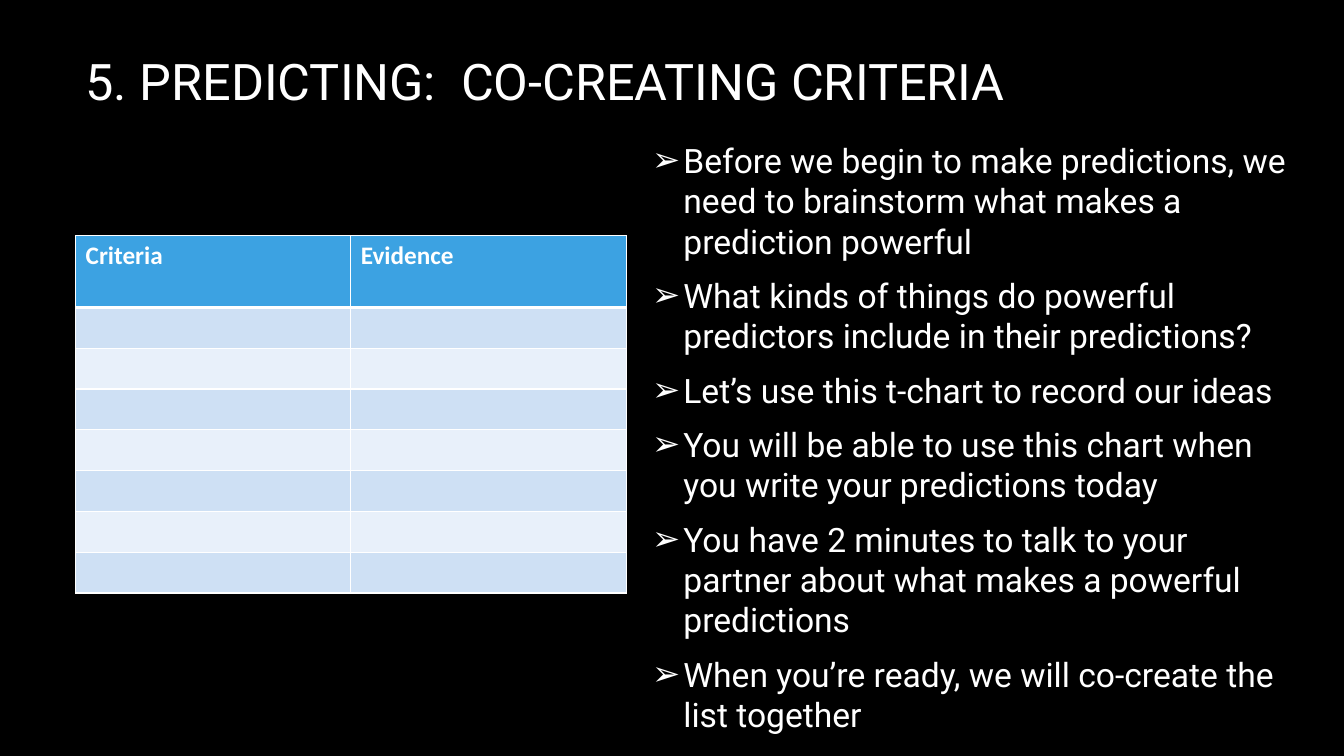
from lxml import etree
from pptx import Presentation
from pptx import util as u
from pptx.dml.color import RGBColor
from pptx.enum import text
from pptx.oxml.ns import qn

COLORS = {
    "background": "000000",
    "text": "FFFFFF",
    "header": "3CA2E2",
    "odd_row": "CEE0F4",
    "even_row": "E8F0FA",
}
TITLE = "5. PREDICTING:  CO-CREATING CRITERIA"
HEADINGS = ["Criteria", "Evidence"]
BLANK_ROWS = 7
STEPS = [
    "Before we begin to make predictions, we need to brainstorm what makes a prediction powerful",
    "What kinds of things do powerful predictors include in their predictions?",
    "Let’s use this t-chart to record our ideas",
    "You will be able to use this chart when you write your predictions today",
    "You have 2 minutes to talk to your partner about what makes a powerful predictions",
    "When you’re ready, we will co-create the list together",
]


class SlideBuilder:
    """Holds the style and the current slide; lengths are half-inch grid cells."""

    CELL = 0.5
    FONT = "Roboto"
    TABLE_FONT = "Calibri"

    def __init__(self, presentation):
        layout = presentation.slide_layouts.get_by_name("Title Only")
        self.slide = presentation.slides.add_slide(layout)
        self.paint(self.slide.background.fill, "background")

    def grid(self, *cells):
        return [u.Inches(cell * self.CELL) for cell in cells]

    def paint(self, fill, color):
        fill.solid()
        fill.fore_color.rgb = RGBColor.from_string(COLORS[color])

    def style(self, paragraph, size, font_name, bold=False):
        for run in paragraph.runs:
            run.font.size = u.Pt(size)
            run.font.name = font_name
            run.font.bold = bold
            run.font.color.rgb = RGBColor.from_string(COLORS["text"])

    def title(self, wording, *place):
        shape = self.slide.shapes.title
        shape.left, shape.top, shape.width, shape.height = self.grid(*place)
        frame = shape.text_frame
        frame.text = wording
        frame.word_wrap = True
        frame.vertical_anchor = text.MSO_ANCHOR.MIDDLE
        frame.paragraphs[0].alignment = text.PP_ALIGN.LEFT
        self.style(frame.paragraphs[0], 36, self.FONT)

    def bullets(self, wordings, *place):
        frame = self.slide.shapes.add_textbox(*self.grid(*place)).text_frame
        frame.word_wrap = True
        frame.vertical_anchor = text.MSO_ANCHOR.MIDDLE
        frame.text = "\n".join(wordings)
        for paragraph in frame.paragraphs:
            self.arrow_bullet(paragraph)
            paragraph.space_after = u.Pt(10)
            self.style(paragraph, 24, self.FONT)

    def arrow_bullet(self, paragraph):
        properties = paragraph._p.get_or_add_pPr()
        indent = u.Inches(0.31)
        properties.set("marL", str(indent))
        properties.set("indent", str(-indent))
        color = etree.SubElement(properties, qn("a:buClr"))
        etree.SubElement(color, qn("a:srgbClr"), val=COLORS["text"])
        etree.SubElement(properties, qn("a:buFont"), typeface="Wingdings 3")
        properties[-1].set("typeface", "Arial")
        etree.SubElement(properties, qn("a:buChar"), char="➢")

    def t_chart(self, headings, blank_rows, left, top, width, header_height, row_height):
        height = header_height + blank_rows * row_height
        table = self.slide.shapes.add_table(
            blank_rows + 1, len(headings), *self.grid(left, top, width, height)).table
        table.horz_banding = False
        for row_index, row in enumerate(table.rows):
            is_header = row_index == 0
            row.height = self.grid(header_height if is_header else row_height)[0]
            band = "header" if is_header else "odd_row" if row_index % 2 else "even_row"
            for cell in row.cells:
                # The header is parted from the rows by a thicker rule
                self.borders(cell, top=3 if row_index == 1 else 1, bottom=3 if is_header else 1)
                self.paint(cell.fill, band)
        for cell, heading in zip(table.rows[0].cells, headings):
            cell.text_frame.text = heading
            self.style(cell.text_frame.paragraphs[0], 18, self.TABLE_FONT, bold=True)

    def borders(self, cell, top, bottom):
        properties = cell._tc.get_or_add_tcPr()
        for side, points in (("L", 1), ("R", 1), ("T", top), ("B", bottom)):
            line = etree.SubElement(properties, qn(f"a:ln{side}"), w=str(u.Pt(points)))
            fill = etree.SubElement(line, qn("a:solidFill"))
            etree.SubElement(fill, qn("a:srgbClr"), val=COLORS["text"])


def main():
    presentation = Presentation()
    presentation.slide_width = u.Inches(13.33)
    presentation.slide_height = u.Inches(7.5)
    builder = SlideBuilder(presentation)

    # Heading
    builder.title(TITLE, 1.5, 0, 23.78, 3.18)
    # Instructions on the right
    builder.bullets(STEPS, 12.74, 4.68, 13.12, 7.98)
    # Chart to fill in on the left
    builder.t_chart(HEADINGS, BLANK_ROWS, 1.5, 4.68, 10.92, 1.42, 0.81)

    presentation.save("out.pptx")


if __name__ == "__main__":
    main()
